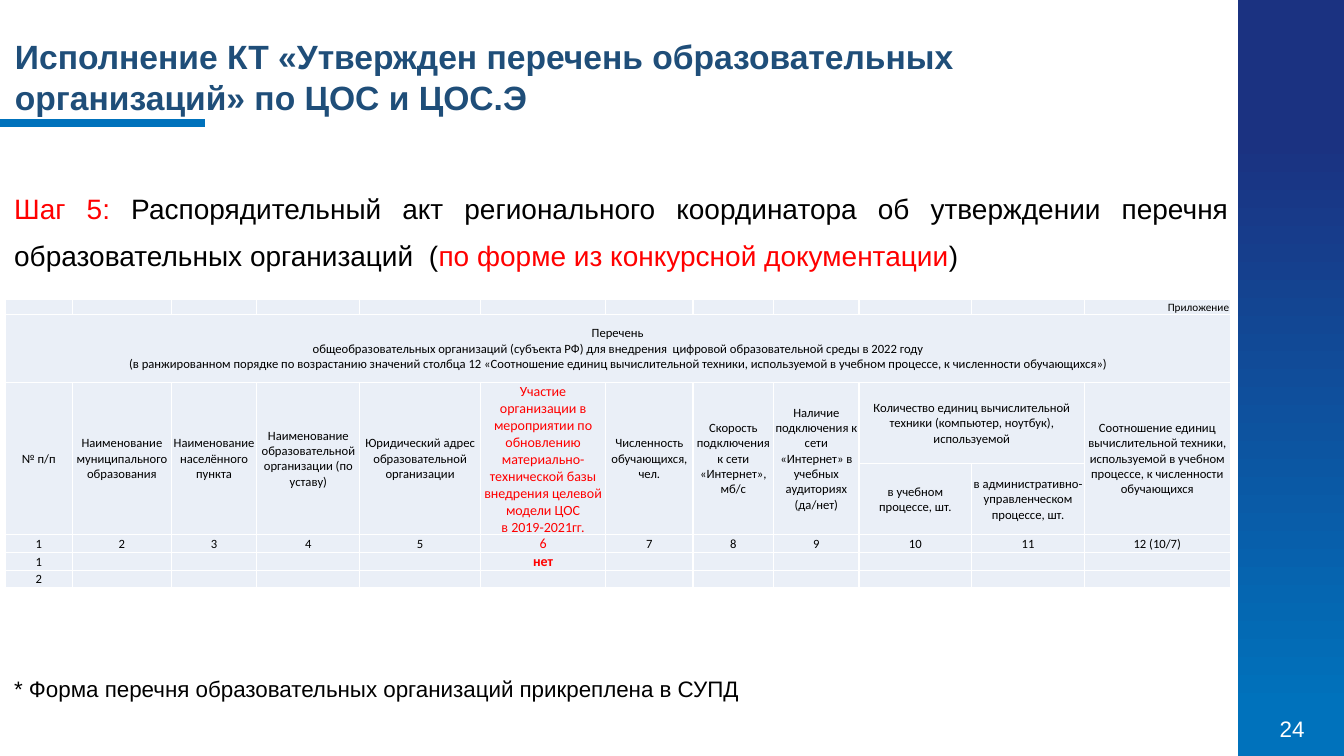
"""Build the slide on the list of schools approved in step 5."""
from dataclasses import dataclass, replace

from lxml.etree import SubElement
from pptx import Presentation
from pptx.dml.color import RGBColor
from pptx.enum.shapes import MSO_CONNECTOR, MSO_SHAPE
from pptx.enum.text import MSO_ANCHOR, PP_ALIGN
from pptx.oxml.ns import qn
from pptx.slide import Slide
from pptx.table import Table, _Cell
from pptx.text.text import TextFrame
from pptx.util import Pt

HUES = {
    "navy": "1B3281",
    "blue": "0072BC",
    "title": "1F4E79",
    "red": "FF0000",
    "black": "000000",
    "white": "FFFFFF",
    "cell": "EAEFF7",
}


@dataclass(frozen=True)
class Run:
    text: str
    size: float
    hue: str = "black"
    font: str = "Arial"
    bold: bool = False


@dataclass(frozen=True)
class Box:
    left: float
    top: float
    width: float
    height: float
    runs: tuple[Run, ...]
    align: PP_ALIGN
    anchor: MSO_ANCHOR = MSO_ANCHOR.MIDDLE
    pitch: float = 1.0


@dataclass(frozen=True)
class Span:
    row: int
    col: int
    last_row: int
    last_col: int


LABELS = (
    Box(3.6, 22.3, 788.4, 65.5,
        (Run("Исполнение КТ «Утвержден перечень образовательных организаций» по ЦОС и ЦОС.Э",
             24, "title", bold=True),), PP_ALIGN.LEFT, MSO_ANCHOR.TOP),
    Box(894.2, 505.4, 57.6, 29.5, (Run("24", 16, "white"),), PP_ALIGN.CENTER),
)
NOTES = (
    Box(9.4, 123.1, 869, 75.6,
        (Run("Шаг 5: ", 20, "red"),
         Run("Распорядительный акт регионального координатора об утверждении перечня "
             "образовательных организаций  (", 20),
         Run("по форме из конкурсной документации", 20, "red"),
         Run(")", 20)), PP_ALIGN.JUSTIFY, pitch=1.5),
    Box(9.4, 473, 869, 39.6,
        (Run("* Форма перечня образовательных организаций прикреплена в СУПД", 16),),
        PP_ALIGN.JUSTIFY),
)

COLS = (48.2, 70.5, 61.2, 73.5, 86.2, 89.5, 62.4, 57.6, 61, 80.5, 80.5, 104.2)
ROWS = (10.8, 48.2, 58.3, 50.6, 12.4, 12.4, 12.4)
RED_COL = 5
HEADS = (
    "№ п/п",
    "Наименование муниципального образования",
    "Наименование населённого пункта",
    "Наименование образовательной организации (по уставу)",
    "Юридический адрес образовательной организации",
    "Участие организации в мероприятии по обновлению материально-технической базы "
    "внедрения целевой модели ЦОС\nв 2019-2021гг.",
    "Численность обучающихся, чел.",
    "Скорость подключения к сети «Интернет», мб/с",
    "Наличие подключения к сети «Интернет» в учебных аудиториях (да/нет)",
    "Количество единиц вычислительной техники (компьютер, ноутбук), используемой",
    "",
    "Соотношение единиц вычислительной техники, используемой в учебном процессе, "
    "к численности обучающихся",
)
GRID = (
    ("",) * 11 + ("Приложение",),
    ("Перечень\nобщеобразовательных организаций (субъекта РФ) для внедрения  цифровой "
     "образовательной среды в 2022 году\n(в ранжированном порядке по возрастанию значений "
     "столбца 12 «Соотношение единиц вычислительной техники, используемой в учебном "
     "процессе, к численности обучающихся»)",) + ("",) * 11,
    HEADS,
    ("",) * 9 + ("в учебном процессе, шт.",
                 "в административно-управленческом процессе, шт.", ""),
    tuple(str(n) for n in range(1, 12)) + ("12 (10/7)",),
    ("1",) + ("",) * 4 + ("нет",) + ("",) * 6,
    ("2",) + ("",) * 11,
)
SPANS = (Span(1, 0, 1, 11), Span(2, 9, 2, 10),
         *(Span(2, col, 3, col) for col in (*range(9), 11)))


def write(frame: TextFrame, runs: tuple[Run, ...], align: PP_ALIGN, pitch: float = 1.0) -> None:
    line = frame.paragraphs[0]
    line.alignment = align
    line.line_spacing = pitch
    for run in runs:
        for index, part in enumerate(run.text.split("\n")):
            if index:
                line.add_line_break()
            if not part:
                continue
            item = line.add_run()
            item.text = part
            item.font.size = Pt(run.size)
            item.font.name = run.font
            item.font.bold = run.bold
            item.font.color.rgb = RGBColor.from_string(HUES[run.hue])
    SubElement(line._p, qn("a:endParaRPr"), sz=str(int(runs[0].size * 100)))


def pad(cell: _Cell, side: float, top: float, base: float) -> None:
    cell.margin_left = cell.margin_right = Pt(side)
    cell.margin_top, cell.margin_bottom = Pt(top), Pt(base)


def edge(cell: _Cell) -> None:
    props = cell._tc.get_or_add_tcPr()
    for index, tag in enumerate(("a:lnL", "a:lnR", "a:lnT", "a:lnB")):
        line = props.makeelement(qn(tag), {"w": str(Pt(1))})
        paint = SubElement(line, qn("a:solidFill"))
        SubElement(paint, qn("a:srgbClr"), val=HUES["white"])
        props.insert(index, line)


def add_grid(slide: Slide, left: float, top: float, cols: tuple[float, ...],
             rows: tuple[float, ...]) -> Table:
    table = slide.shapes.add_table(len(rows), len(cols), Pt(left), Pt(top),
                                   Pt(sum(cols)), Pt(sum(rows))).table
    table.first_row = table.horz_banding = False
    for col, width in zip(table.columns, cols):
        col.width = Pt(width)
    for row, height in zip(table.rows, rows):
        row.height = Pt(height)
    return table


def add_note(slide: Slide, box: Box) -> None:
    cell = add_grid(slide, box.left, box.top, (box.width,), (box.height,)).cell(0, 0)
    cell.fill.background()
    cell.vertical_anchor = box.anchor
    pad(cell, 0.7, 2, 2)
    write(cell.text_frame, box.runs, box.align, box.pitch)


def add_label(slide: Slide, box: Box) -> None:
    frame = slide.shapes.add_textbox(Pt(box.left), Pt(box.top),
                                     Pt(box.width), Pt(box.height)).text_frame
    frame.word_wrap = True
    frame.vertical_anchor = box.anchor
    write(frame, box.runs, box.align, box.pitch)


def add_form(slide: Slide) -> None:
    table = add_grid(slide, 3.6, 214, COLS, ROWS)
    for span in SPANS:
        table.cell(span.row, span.col).merge(table.cell(span.last_row, span.last_col))
    for row, texts in enumerate(GRID):
        for col, text in enumerate(texts):
            cell = table.cell(row, col)
            cell.fill.solid()
            cell.fill.fore_color.rgb = RGBColor.from_string(HUES["cell"])
            edge(cell)
            pad(cell, 0.7, 0.7, 0)
            cell.vertical_anchor = MSO_ANCHOR.MIDDLE if row else MSO_ANCHOR.BOTTOM
            run = Run(text, 9 if row else 8, font="Calibri")
            if col == RED_COL and row > 1 and text:
                run = replace(run, size=10, hue="red", bold=row == 5)
            write(cell.text_frame, (run,), PP_ALIGN.CENTER if row else PP_ALIGN.RIGHT)


def add_frame(slide: Slide) -> None:
    band = slide.shapes.add_shape(MSO_SHAPE.RECTANGLE, Pt(884.4), Pt(0), Pt(75.6), Pt(540))
    band.shadow.inherit = False
    band.line.fill.background()
    band.fill.gradient()
    band.fill.gradient_angle = 270
    for stop, place, hue in zip(band.fill.gradient_stops, (0.18, 0.94), ("navy", "blue")):
        stop.position = place
        stop.color.rgb = RGBColor.from_string(HUES[hue])
    rule = slide.shapes.add_connector(MSO_CONNECTOR.STRAIGHT, Pt(0), Pt(87.8), Pt(146.2), Pt(87.8))
    rule.line.width = Pt(6)
    rule.line.color.rgb = RGBColor.from_string(HUES["blue"])
    SubElement(rule._element.spPr, qn("a:effectLst"))


def main() -> None:
    deck = Presentation()
    deck.slide_width, deck.slide_height = Pt(960), Pt(540)
    slide = deck.slides.add_slide(deck.slide_layouts[6])
    add_frame(slide)
    for box in LABELS:
        add_label(slide, box)
    add_form(slide)
    for box in NOTES:
        add_note(slide, box)
    deck.save("out.pptx")


if __name__ == "__main__":
    main()
